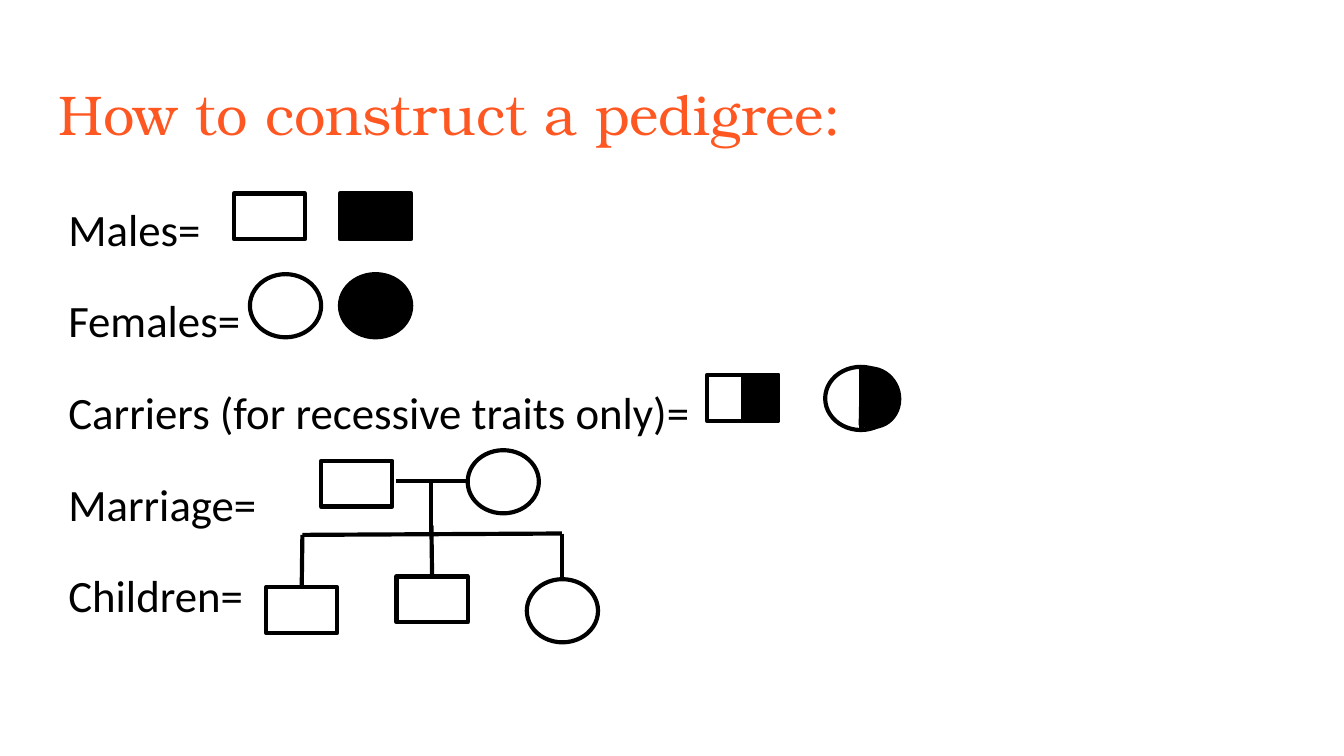
from lxml import etree
from pptx import Presentation
from pptx.dml.color import RGBColor
from pptx.enum.shapes import MSO_CONNECTOR, MSO_SHAPE as SHAPE
from pptx.enum.text import MSO_ANCHOR
from pptx.oxml.ns import qn
from pptx.util import Inches, Pt

BLACK = RGBColor(0x00, 0x00, 0x00)
ORANGE = RGBColor(0xFF, 0x57, 0x22)
RECT, OVAL = SHAPE.RECTANGLE, SHAPE.OVAL
W = 0.53
HEIGHT = {RECT: 0.34, OVAL: 0.47}
RECT_TOP = 0

prs = Presentation()
prs.slide_width = Inches(10)
prs.slide_height = Inches(10) * 9 // 16
s = prs.slides.add_slide(prs.slide_layouts[6])


def add_symbol(kind, x, y, filled=False, w=W, h=None, line=2.25):
    """Add a pedigree symbol; its height follows from its kind unless given."""
    sp = s.shapes.add_shape(kind, Inches(x), Inches(y), Inches(w), Inches(h or HEIGHT[kind]))
    sp.shadow.inherit = False
    if filled:
        sp.fill.solid()
        sp.fill.fore_color.rgb = BLACK
    else:
        sp.fill.background()
    sp.line.color.rgb = BLACK
    sp.line.width = Pt(line)
    return sp


def add_line(x1, y1, x2, y2):
    c = s.shapes.add_connector(MSO_CONNECTOR.STRAIGHT, Inches(x1), Inches(y1), Inches(x2), Inches(y2))
    c.line.color.rgb = BLACK
    c.line.width = Pt(2.25)
    etree.SubElement(c._element.spPr, qn("a:effectLst"))
    return c


# Title and labels
labels = ["Males=", "Females=", "Carriers (for recessive traits only)=", "Marriage=", "Children="]
texts = [
    ((0.34, 0.49, 9.32, 0.63), ["How to construct a pedigree:"], {},
     {"name": "TeX Gyre Bonum", "size": Pt(30)}, ORANGE),
    ((0.41, 1.34, 9.32, 3.74), labels, {"line_spacing": 1.15},
     {"name": "Calibri", "size": Pt(24)}, BLACK),
]
for box, lines, spacing, font, color in texts:
    tf = s.shapes.add_textbox(*map(Inches, box)).text_frame
    tf.word_wrap = True
    tf.vertical_anchor = MSO_ANCHOR.TOP
    for side in ("left", "top", "right", "bottom"):
        setattr(tf, f"margin_{side}", Inches(0.1))
    for i, text in enumerate(lines):
        p = tf.paragraphs[0] if i == 0 else tf.add_paragraph()
        if i:
            p.space_before = Pt(16)
        for name, value in spacing.items():
            setattr(p, name, value)
        r = p.add_run()
        r.text = text
        for name, value in font.items():
            setattr(r.font, name, value)
        r.font.color.rgb = color

# Males and females, unaffected and affected
for kind, x, y in [(RECT, 1.74, 1.44), (OVAL, 1.86, 2.04)]:
    add_symbol(kind, x, y)
    add_symbol(kind, 2.53, y, filled=True)

# Carriers, half filled
add_symbol(RECT, 5.26, 2.79)
add_symbol(RECT, 5.53, 2.79, filled=True, w=0.26)
add_line(6.41, 2.73, 6.41, 3.19)
add_symbol(OVAL, 6.14, 2.73)
half = add_symbol(SHAPE.CHORD, 6.27, 2.73, filled=True, w=0.43, h=0.46, line=0.75)
half.rotation = 339.1
half._element.spPr.find(qn("a:xfrm")).set("flipH", "1")

# Marriage
add_symbol(OVAL, 3.48, 3.35)
add_symbol(RECT, 2.39, 3.43)
add_line(2.95, 3.58, 3.48, 3.58)

# Children
son_1 = add_symbol(RECT, 1.98, 4.37)
son_2 = add_symbol(RECT, 2.95, 4.29)
add_symbol(OVAL, 3.92, 4.31)
add_line(2.25, 3.98, 4.18, 3.97)
add_line(2.25, 3.98, 2.25, 4.37).end_connect(son_1, RECT_TOP)
add_line(4.18, 3.97, 4.18, 4.29)
add_line(3.21, 3.91, 3.21, 4.29).end_connect(son_2, RECT_TOP)
add_line(3.21, 3.58, 3.21, 3.97)

prs.save("out.pptx")
